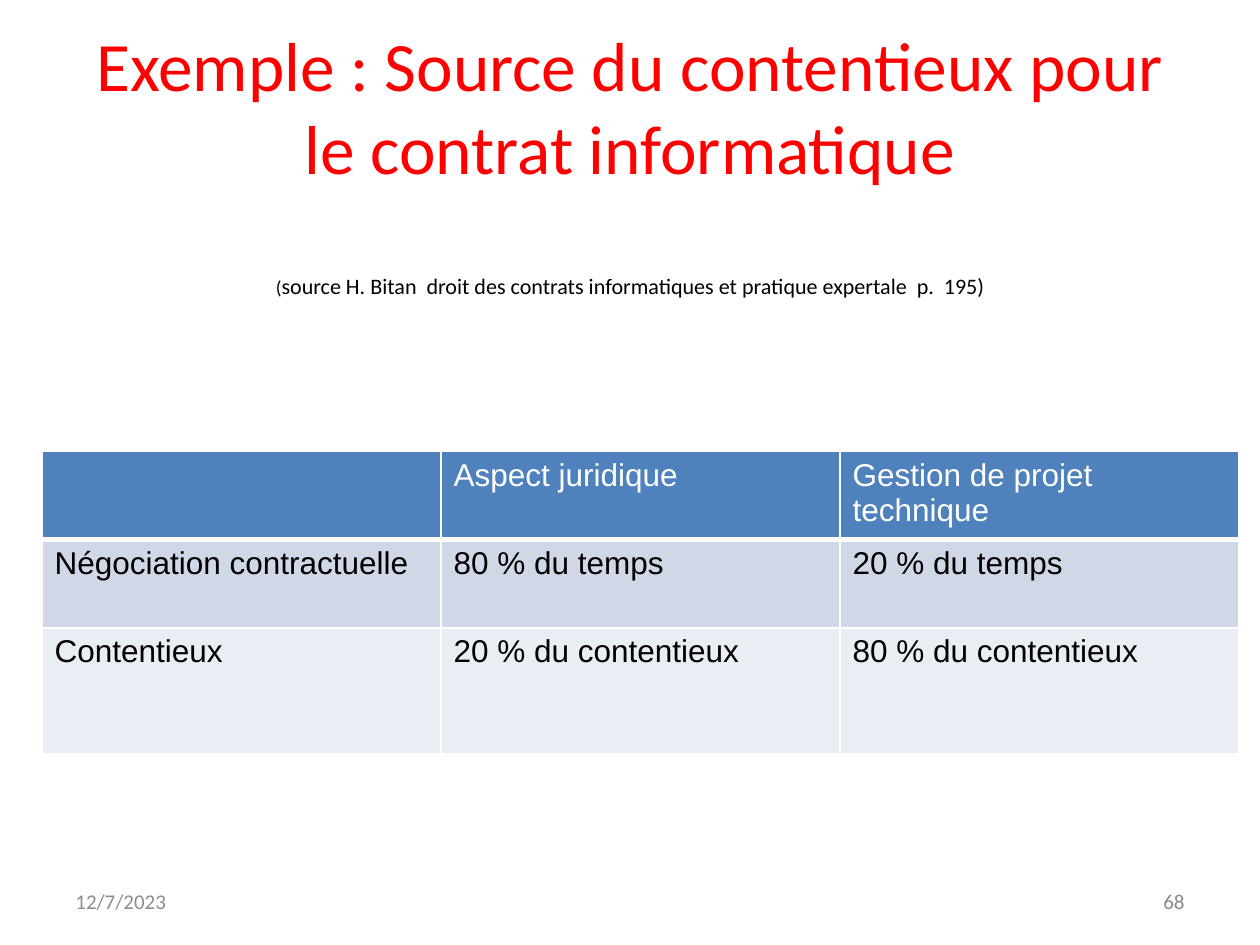
from dataclasses import dataclass
from lxml.etree import SubElement as Sub
from pptx import Presentation
from pptx.dml.color import RGBColor as Rgb
from pptx.enum.text import MSO_ANCHOR as Anchor, PP_ALIGN as Align
from pptx.oxml.ns import qn
from pptx.util import Pt

HUES = {
    "red": "FF0000", "black": "000000", "white": "FFFFFF",
    "date": "8C8C8C", "page": "898989",
    "head": "4F81BD", "odd": "D0D8E8", "even": "E9EDF4",
}


@dataclass
class Run:
    text: str
    size: float
    hue: str
    font: str = "Calibri"


@dataclass
class Line:
    runs: list[Run]
    gap: float = 0


@dataclass
class Box:
    left: float
    top: float
    width: float
    height: float
    align: Align
    lines: list[Line]


@dataclass
class Row:
    height: float
    fill: str
    ink: str
    words: list[str]
    base: float = 1


BOXES = [
    Box(36, 72, 648, 39.6, Align.CENTER, [
        Line([Run("Exemple : Source du contentieux pour", 39.6, "red")]),
        Line([Run("le contrat informatique", 39.6, "red")]),
        Line([
            Run("(", 10.8, "black"),
            Run("source H. Bitan  droit des contrats informatiques et "
                "pratique expertale  p.  195)", 12.6, "black"),
        ], gap=48),
    ]),
    Box(36, 500.4, 168, 28.8, Align.LEFT,
        [Line([Run("12/7/2023", 12, "date")])]),
    Box(516, 500.4, 168, 28.8, Align.RIGHT,
        [Line([Run("68", 12, "page")])]),
]

ROWS = [
    Row(28.8, "head", "white",
        ["", "Aspect juridique", "Gestion de projet technique"], base=3),
    Row(50.4, "odd", "black",
        ["Négociation contractuelle", "80 % du temps", "20 % du temps"]),
    Row(72, "even", "black",
        ["Contentieux", "20 % du contentieux", "80 % du contentieux"]),
]


def add_run(para, run: Run) -> None:
    part = para.add_run()
    part.text = run.text
    font = part.font
    font.name, font.size, font.bold = run.font, Pt(run.size), False
    font.color.rgb = Rgb.from_string(HUES[run.hue])


def add_box(slide, box: Box) -> None:
    shape = slide.shapes.add_textbox(
        Pt(box.left), Pt(box.top), Pt(box.width), Pt(box.height))
    frame = shape.text_frame
    frame.word_wrap = True
    frame.vertical_anchor = Anchor.MIDDLE
    for i, line in enumerate(box.lines):
        para = frame.add_paragraph() if i else frame.paragraphs[0]
        para.alignment = box.align
        para.space_before = Pt(line.gap)
        for run in line.runs:
            add_run(para, run)


def add_edge(cell, side: str, width: float) -> None:
    props = cell._tc.get_or_add_tcPr()
    edge = Sub(props, qn(f"a:ln{side}"), w=str(Pt(width)))
    fill = Sub(edge, qn("a:solidFill"))
    Sub(fill, qn("a:srgbClr"), val=HUES["white"])


def fill_cell(cell, row: Row, text: str) -> None:
    for side in "LRTB":
        add_edge(cell, side, row.base if side == "B" else 1)
    cell.fill.solid()
    cell.fill.fore_color.rgb = Rgb.from_string(HUES[row.fill])
    para = cell.text_frame.paragraphs[0]
    para.font.size = Pt(18)
    if text:
        add_run(para, Run(text, 18, row.ink, "Arial"))


def add_grid(slide, rows: list[Row]) -> None:
    high = sum(row.height for row in rows)
    grid = slide.shapes.add_table(
        len(rows), 3, Pt(24), Pt(258), Pt(684), Pt(high)).table
    for i, row in enumerate(rows):
        grid.rows[i].height = Pt(row.height)
        for j, text in enumerate(row.words):
            fill_cell(grid.cell(i, j), row, text)


def main() -> None:
    deck = Presentation()
    deck.slide_width, deck.slide_height = Pt(720), Pt(540)
    slide = deck.slides.add_slide(deck.slide_layouts[6])
    title, *feet = BOXES
    add_box(slide, title)
    add_grid(slide, ROWS)
    for box in feet:
        add_box(slide, box)
    deck.save("out.pptx")


if __name__ == "__main__":
    main()
